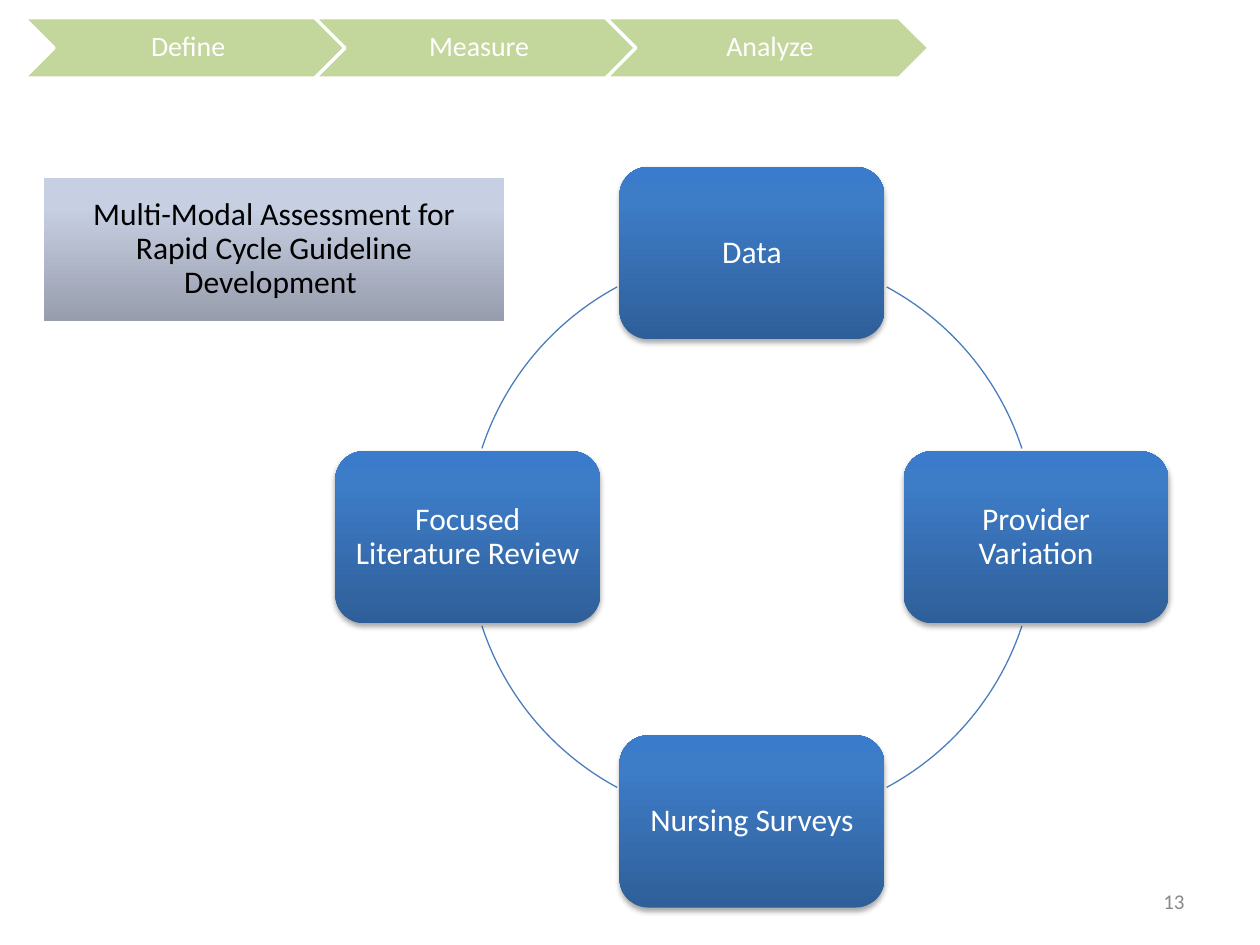
from math import cos, radians, sin

from lxml.etree import SubElement
from pptx import Presentation
from pptx.dml.color import RGBColor
from pptx.enum.shapes import MSO_SHAPE
from pptx.enum.text import MSO_ANCHOR, PP_ALIGN
from pptx.oxml.ns import qn
from pptx.util import Pt

COLORS = {
    "step": "C3D69B",
    "white": "FFFFFF",
    "black": "000000",
    "ring": "4B7EBC",
    "number": "898989",
    "node_bottom": "2F5F99",
    "node_middle": "3D7CC7",
    "node_top": "3A7CCB",
    "title_bottom": "979DAC",
    "title_middle": "C7CFE3",
    "title_top": "C8D0E4",
}


def color(name):
    return RGBColor.from_string(COLORS[name])


def add_shape(slide, kind, left, top, width, height):
    sp = slide.shapes.add_shape(kind, Pt(left), Pt(top), Pt(width), Pt(height))
    sp.shadow.inherit = False
    sp.fill.background()
    sp.line.fill.background()
    return sp


def set_text(sp, text, size=18, font_color="white", align=PP_ALIGN.CENTER,
             margins=(10, 10, 10, 10), spacing=0.9):
    tf = sp.text_frame
    tf.word_wrap = True
    tf.vertical_anchor = MSO_ANCHOR.MIDDLE
    tf.margin_left, tf.margin_top, tf.margin_right, tf.margin_bottom = map(Pt, margins)
    p = tf.paragraphs[0]
    p.alignment = align
    p.line_spacing = spacing
    r = p.add_run()
    r.text = text
    r.font.name = "Calibri"
    r.font.size = Pt(size)
    r.font.color.rgb = color(font_color)


def set_gradient(sp, name):
    sp.fill.gradient()
    sp.fill.gradient_angle = 90
    gs_list = sp._element.spPr.find(".//" + qn("a:gsLst"))
    for gs in list(gs_list):
        gs_list.remove(gs)
    for pos, part in ((0, "bottom"), (80, "middle"), (100, "top")):
        gs = SubElement(gs_list, qn("a:gs"), pos=str(pos * 1000))
        SubElement(gs, qn("a:srgbClr"), val=COLORS[f"{name}_{part}"])


def add_soft_shadow(sp):
    effects = sp._element.spPr.find(qn("a:effectLst"))
    shadow = SubElement(effects, qn("a:outerShdw"), blurRad=str(Pt(3.1)),
                        dist=str(Pt(1.8)), dir="5400000", rotWithShape="0")
    clr = SubElement(shadow, qn("a:srgbClr"), val=COLORS["black"])
    SubElement(clr, qn("a:alpha"), val="35000")


def add_steps(slide, left, top, width, height, labels):
    overlap = 18.7
    step_w = (width + overlap * (len(labels) - 1)) / len(labels)
    for i, label in enumerate(labels):
        sp = add_shape(slide, MSO_SHAPE.CHEVRON,
                       left + i * (step_w - overlap), top, step_w, height)
        sp.fill.solid()
        sp.fill.fore_color.rgb = color("step")
        sp.line.color.rgb = color("white")
        sp.line.width = Pt(2)
        set_text(sp, label, size=16, margins=(5, 1.5, 2, 1.5))


def add_title(slide, left, top, width, height, text):
    sp = add_shape(slide, MSO_SHAPE.RECTANGLE, left, top, width, height)
    set_gradient(sp, "title")
    set_text(sp, text, font_color="black")


def add_cycle(slide, left, top, size, labels):
    node_w, node_h = 151.4, 98.4
    radius = size / 2
    for start in (298.3, 18.2, 118.3, 198.2):
        arc = add_shape(slide, MSO_SHAPE.ARC, left, top, size, size)
        arc.adjustments[0] = start * 0.6
        arc.adjustments[1] = (start + 43.5) * 0.6
        arc.line.color.rgb = color("ring")
        arc.line.width = Pt(0.75)
    for i, label in enumerate(labels):
        angle = radians(360 / len(labels) * i - 90)
        x = left + radius * (1 + cos(angle)) - node_w / 2
        y = top + radius * (1 + sin(angle)) - node_h / 2
        sp = add_shape(slide, MSO_SHAPE.ROUNDED_RECTANGLE, x, y, node_w, node_h)
        set_gradient(sp, "node")
        add_soft_shadow(sp)
        set_text(sp, label, margins=(5.4, 5.4, 5.4, 5.4))


def add_number(slide, left, top, width, height, text):
    sp = slide.shapes.add_textbox(Pt(left), Pt(top), Pt(width), Pt(height))
    set_text(sp, text, size=12, font_color="number", align=PP_ALIGN.RIGHT,
             margins=(7.2, 3.6, 7.2, 3.6), spacing=1.0)


def main():
    prs = Presentation()
    prs.slide_width, prs.slide_height = Pt(720), Pt(540)
    slide = prs.slides.add_slide(prs.slide_layouts[6])
    add_title(slide, 25.2, 101.7, 262.8, 81.6,
              "Multi-Modal Assessment for Rapid Cycle Guideline Development ")
    add_number(slide, 516, 500.5, 168, 28.8, "13")
    add_cycle(slide, 267.3, 144.6, 324.8,
              ["Data", "Provider Variation", "Nursing Surveys",
               "Focused Literature Review"])
    add_steps(slide, 13.6, 10.1, 517.4, 34.6, ["Define", "Measure", "Analyze"])
    prs.save("out.pptx")


if __name__ == "__main__":
    main()
